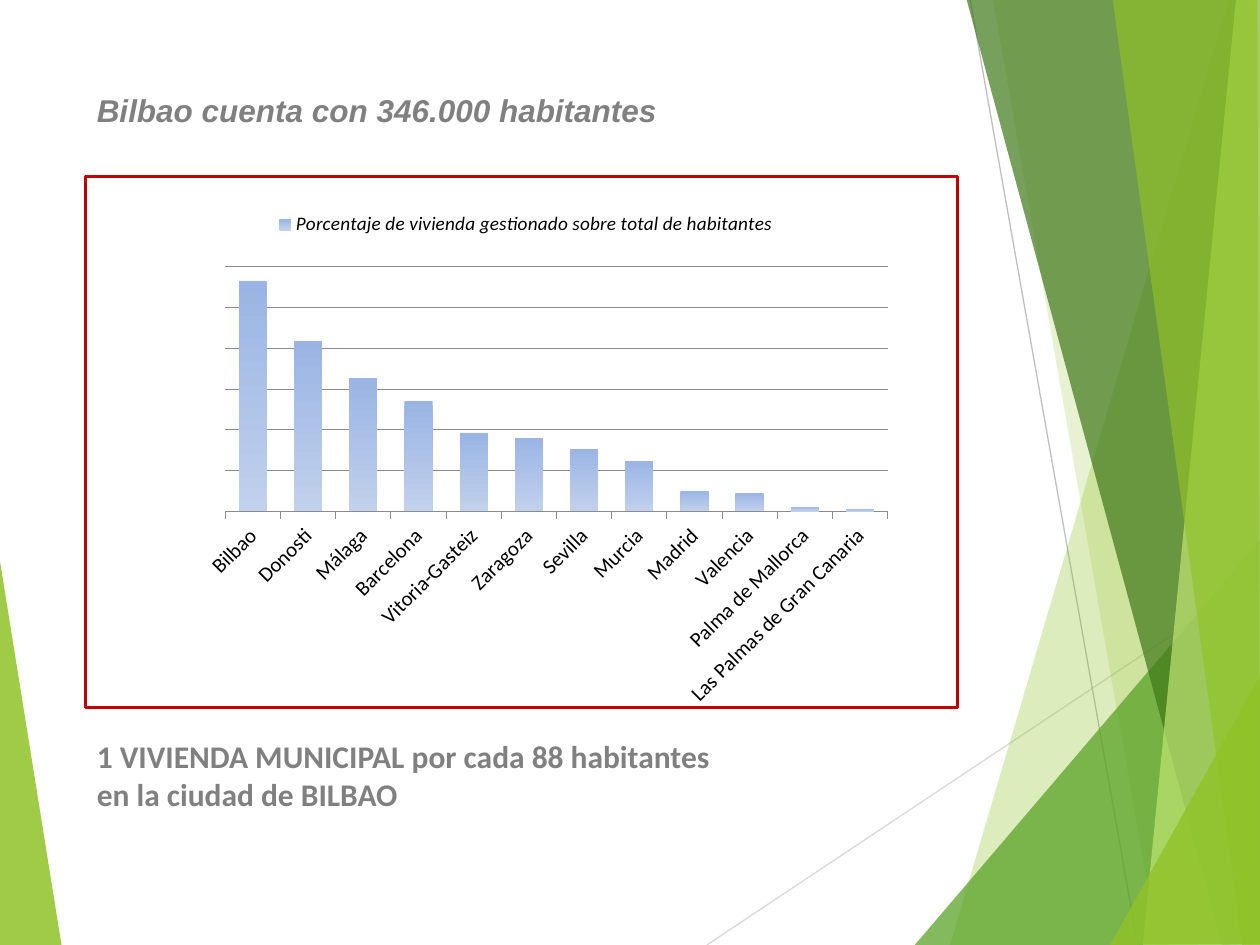
from lxml.etree import SubElement
from pptx import Presentation
from pptx.chart.data import CategoryChartData
from pptx.dml.color import RGBColor
from pptx.enum.chart import XL_CHART_TYPE as ChartType
from pptx.enum.chart import XL_LEGEND_POSITION as LegendPosition
from pptx.enum.chart import XL_TICK_MARK as TickMark
from pptx.enum.shapes import MSO_CONNECTOR as Connector
from pptx.oxml import parse_xml
from pptx.oxml.ns import nsdecls, qn
from pptx.util import Pt

SCALE = 9144
GREEN = "90C226"
GREY = "808080"
AXIS_GREY = "8B8B8B"

FACETS = [
    (GREEN, 85, [(-1, 439), (49, 751), (-1, 750)]),
    (GREEN, 30, [(975, 0), (754, 750), (1002, 751), (1001, 1)]),
    (GREEN, 20, [(788, -1), (919, 750), (1001, 750), (1001, -1)]),
    ("54A021", 72, [(726, 750), (1000, 429), (1001, 750)]),
    ("3F7819", 70, [(767, -1), (970, 750), (1001, 749), (1001, -1)]),
    ("C0E474", 70, [(981, -1), (907, 750), (1001, 750), (1000, -1)]),
    (GREEN, 65, [(883, -1), (986, 750), (1000, 750), (998, -1)]),
    (GREEN, 80, [(881, 750), (1001, 535), (1001, 749)]),
]

RAYS = [
    ("D9D9D9", (561, 750), (1001, 457)),
    ("BFBFBF", (770, 0), (903, 750)),
]

HOUSING = {
    "Bilbao": 100,
    "Donosti": 74,
    "Málaga": 58,
    "Barcelona": 48,
    "Vitoria-Gasteiz": 34,
    "Zaragoza": 32,
    "Sevilla": 27,
    "Murcia": 22,
    "Madrid": 9,
    "Valencia": 8,
    "Palma de Mallorca": 2,
    "Las Palmas de Gran Canaria": 1,
}
GRID_STEP = 17.7


def px(*lengths):
    return [length * SCALE for length in lengths]


def color(value):
    return RGBColor.from_string(value)


def add_facet(page, fill, opacity, points):
    builder = page.shapes.build_freeform(*points[0], scale=SCALE)
    builder.add_line_segments(points[1:], close=True)
    shape = builder.convert_to_shape()
    shape.shadow.inherit = False
    shape.fill.solid()
    shape.fill.fore_color.rgb = color(fill)
    shape.line.fill.background()
    tint = shape.fill._xPr.find(qn("a:solidFill"))[0]
    SubElement(tint, qn("a:alpha"), val=str(opacity * 1000))


def add_ray(page, stroke, start, end):
    ray = page.shapes.add_connector(Connector.STRAIGHT, *px(*start, *end))
    ray.line.color.rgb = color(stroke)
    ray.line.width = Pt(0.75)
    SubElement(ray._element.spPr, qn("a:effectLst"))


def add_text(page, place, lines, font, italic=False):
    box = page.shapes.add_textbox(*px(*place))
    frame = box.text_frame
    frame.word_wrap = True
    for index, line in enumerate(lines):
        para = frame.paragraphs[0] if index == 0 else frame.add_paragraph()
        span = para.add_run()
        span.text = line
        style_font(span.font, font, 18, GREY, italic)
        span.font.bold = True


def style_font(font, name, size, fill, italic=False):
    font.name = name
    font.size = Pt(size)
    font.italic = italic
    font.color.rgb = color(fill)


def style_line(line, stroke, width):
    line.color.rgb = color(stroke)
    line.width = Pt(width)


def manual_layout(left, top, width, height, inner=False):
    target = '<c:layoutTarget val="inner"/>' if inner else ""
    return parse_xml(
        f'<c:layout {nsdecls("c")}><c:manualLayout>{target}'
        '<c:xMode val="edge"/><c:yMode val="edge"/>'
        f'<c:x val="{left}"/><c:y val="{top}"/>'
        f'<c:w val="{width}"/><c:h val="{height}"/>'
        "</c:manualLayout></c:layout>"
    )


def place_part(part, layout, index):
    for old in part.findall(qn("c:layout")):
        part.remove(old)
    part.insert(index, layout)


def add_border(chart_space, stroke, width):
    border = parse_xml(
        f'<c:spPr {nsdecls("c", "a")}><a:noFill/><a:ln w="{Pt(width)}"><a:solidFill>'
        f'<a:srgbClr val="{stroke}"/></a:solidFill></a:ln></c:spPr>'
    )
    chart_space.find(qn("c:chart")).addnext(border)


def style_axes(chart):
    cities = chart.category_axis
    cities.major_tick_mark = TickMark.OUTSIDE
    style_line(cities.format.line, AXIS_GREY, 0.5)
    style_font(cities.tick_labels.font, "Calibri", 12, "000000")
    cities._element.find(qn("c:txPr")).find(qn("a:bodyPr")).set("rot", "-2700000")
    share = chart.value_axis
    share.visible = False
    share.minimum_scale = 0
    share.maximum_scale = GRID_STEP * 6
    share.major_unit = GRID_STEP
    share.has_major_gridlines = True
    style_line(share.major_gridlines.format.line, AXIS_GREY, 0.5)


def style_bars(plot):
    plot.gap_width = 95
    plot.vary_by_categories = False
    fill = plot.series[0].format.fill
    fill.gradient()
    fill.gradient_angle = 270
    for stop, position, tint in zip(fill.gradient_stops, (0, 1), ("9AB4E4", "C1D1EC")):
        stop.position = position
        stop.color.rgb = color(tint)


def style_legend(chart):
    chart.has_legend = True
    legend = chart.legend
    legend.position = LegendPosition.RIGHT
    legend.include_in_layout = False
    style_font(legend.font, "Calibri", 11, "000000", italic=True)
    place_part(legend._element, manual_layout(0.21, 0.06, 0.59, 0.06), 1)


def add_housing_chart(page, place):
    data = CategoryChartData()
    data.categories = list(HOUSING)
    data.add_series(
        "Porcentaje de vivienda gestionado sobre total de habitantes", HOUSING.values()
    )
    frame = page.shapes.add_chart(ChartType.COLUMN_CLUSTERED, *px(*place), data)
    chart = frame.chart
    chart.has_title = False
    style_font(chart.font, "Karla", 10, "000000")
    style_axes(chart)
    style_bars(chart.plots[0])
    style_legend(chart)
    plot_area = chart._chartSpace.find(qn("c:chart")).find(qn("c:plotArea"))
    place_part(plot_area, manual_layout(0.16, 0.17, 0.76, 0.46, inner=True), 0)
    add_border(chart._chartSpace, "C00000", 1.75)


def main():
    deck = Presentation()
    deck.slide_width, deck.slide_height = px(1000, 750)
    page = deck.slides.add_slide(deck.slide_layouts[6])
    add_facet(page, *FACETS[0])
    for ray in RAYS:
        add_ray(page, *ray)
    for facet in FACETS[1:]:
        add_facet(page, *facet)
    add_housing_chart(page, (67, 139, 694, 424))
    add_text(
        page,
        (67, 67, 694, 144),
        ["Bilbao cuenta con 346.000 habitantes"],
        "Arial",
        italic=True,
    )
    add_text(
        page,
        (67, 580, 520, 71),
        ["1 VIVIENDA MUNICIPAL por cada 88 habitantes", "en la ciudad de BILBAO"],
        "Calibri",
    )
    deck.save("out.pptx")


if __name__ == "__main__":
    main()
